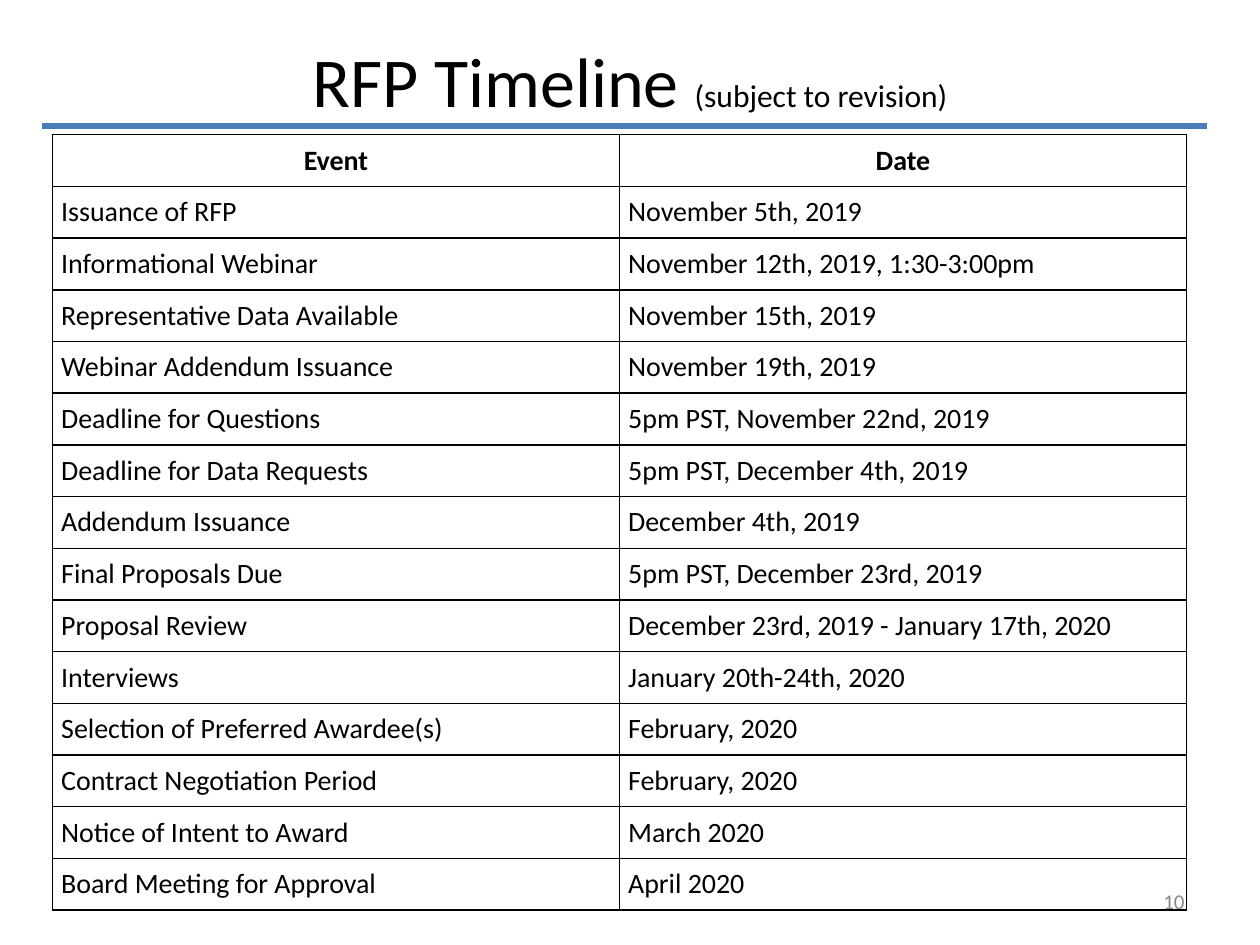
from pptx import Presentation
from pptx.dml.color import RGBColor
from pptx.enum import shapes, text
from pptx.oxml import parse_xml
from pptx.oxml import ns
from pptx.util import Pt

FONT = "Calibri"
BLACK, BLUE, GRAY = "000000", "4A7DBA", "888888"
TITLE = [("RFP Timeline ", 40), ("(subject to revision)", 18)]
PAGE_NUMBER = "10"
HEADINGS = ("Event", "Date")
EVENTS = [
    ("Issuance of RFP", "November 5th, 2019"),
    ("Informational Webinar", "November 12th, 2019, 1:30-3:00pm"),
    ("Representative Data Available", "November 15th, 2019"),
    ("Webinar Addendum Issuance", "November 19th, 2019"),
    ("Deadline for Questions", "5pm PST, November 22nd, 2019"),
    ("Deadline for Data Requests", "5pm PST, December 4th, 2019"),
    ("Addendum Issuance", "December 4th, 2019"),
    ("Final Proposals Due", "5pm PST, December 23rd, 2019"),
    ("Proposal Review", "December 23rd, 2019 - January 17th, 2020"),
    ("Interviews", "January 20th-24th, 2020"),
    ("Selection of Preferred Awardee(s)", "February, 2020"),
    ("Contract Negotiation Period", "February, 2020"),
    ("Notice of Intent to Award", "March 2020"),
    ("Board Meeting for Approval", "April 2020"),
]
TABLE_LEFT, TABLE_TOP = 30, 77
COLUMN_WIDTH, ROW_HEIGHT, CELL_MARGIN = 324, 29.56, 5


def color(value):
    return RGBColor.from_string(value)


def style(font, size, value, bold=False):
    font.name, font.size, font.bold = FONT, Pt(size), bold
    font.color.rgb = color(value)


def add_box(page, left, top, width, height, align):
    box = page.shapes.add_textbox(Pt(left), Pt(top), Pt(width), Pt(height))
    box.text_frame.word_wrap = True
    para = box.text_frame.paragraphs[0]
    para.alignment = align
    return box.text_frame, para


def add_title(page):
    frame, para = add_box(page, 36, 21.6, 648, 62.64, text.PP_ALIGN.CENTER)
    frame.margin_top = 0
    for words, size in TITLE:
        span = para.add_run()
        span.text = words
        style(span.font, size, BLACK)


def add_rule(page):
    rule = page.shapes.add_connector(
        shapes.MSO_CONNECTOR.STRAIGHT, Pt(24), Pt(72), Pt(690), Pt(72))
    rule.line.color.rgb = color(BLUE)
    rule.line.width = Pt(3)
    rule._element.spPr.append(parse_xml(f"<a:effectLst {ns.nsdecls('a')}/>"))


def add_page_number(page):
    frame, para = add_box(page, 516, 500.5, 168, 28.75, text.PP_ALIGN.RIGHT)
    frame.vertical_anchor = text.MSO_ANCHOR.MIDDLE
    para.text = PAGE_NUMBER
    style(para.font, 12, GRAY)


def add_borders(cell):
    properties = cell._tc.get_or_add_tcPr()
    for position, side in enumerate(("lnL", "lnR", "lnT", "lnB")):
        properties.insert(position, parse_xml(
            f'<a:{side} {ns.nsdecls("a")} w="{Pt(1)}"><a:solidFill>'
            f'<a:srgbClr val="{BLACK}"/></a:solidFill></a:{side}>'))


def fill_cell(cell, words, heading):
    cell.margin_left = cell.margin_right = Pt(CELL_MARGIN)
    cell.margin_top = cell.margin_bottom = Pt(CELL_MARGIN)
    cell.fill.background()
    add_borders(cell)
    para = cell.text_frame.paragraphs[0]
    para.text = words
    para.alignment = text.PP_ALIGN.CENTER if heading else text.PP_ALIGN.LEFT
    style(para.font, 16, BLACK, heading)


def add_timeline(page):
    rows = [HEADINGS] + EVENTS
    table = page.shapes.add_table(
        len(rows), len(HEADINGS), Pt(TABLE_LEFT), Pt(TABLE_TOP),
        Pt(COLUMN_WIDTH * len(HEADINGS)), Pt(ROW_HEIGHT * len(rows))).table
    table.horz_banding = False
    table.first_row = False
    for r, row in enumerate(rows):
        table.rows[r].height = Pt(ROW_HEIGHT)
        for c, words in enumerate(row):
            fill_cell(table.cell(r, c), words, r == 0)


def main():
    deck = Presentation()
    deck.slide_width, deck.slide_height = Pt(720), Pt(540)
    page = deck.slides.add_slide(deck.slide_layouts[6])
    add_title(page)
    add_rule(page)
    add_page_number(page)
    add_timeline(page)
    deck.save("out.pptx")


if __name__ == "__main__":
    main()
